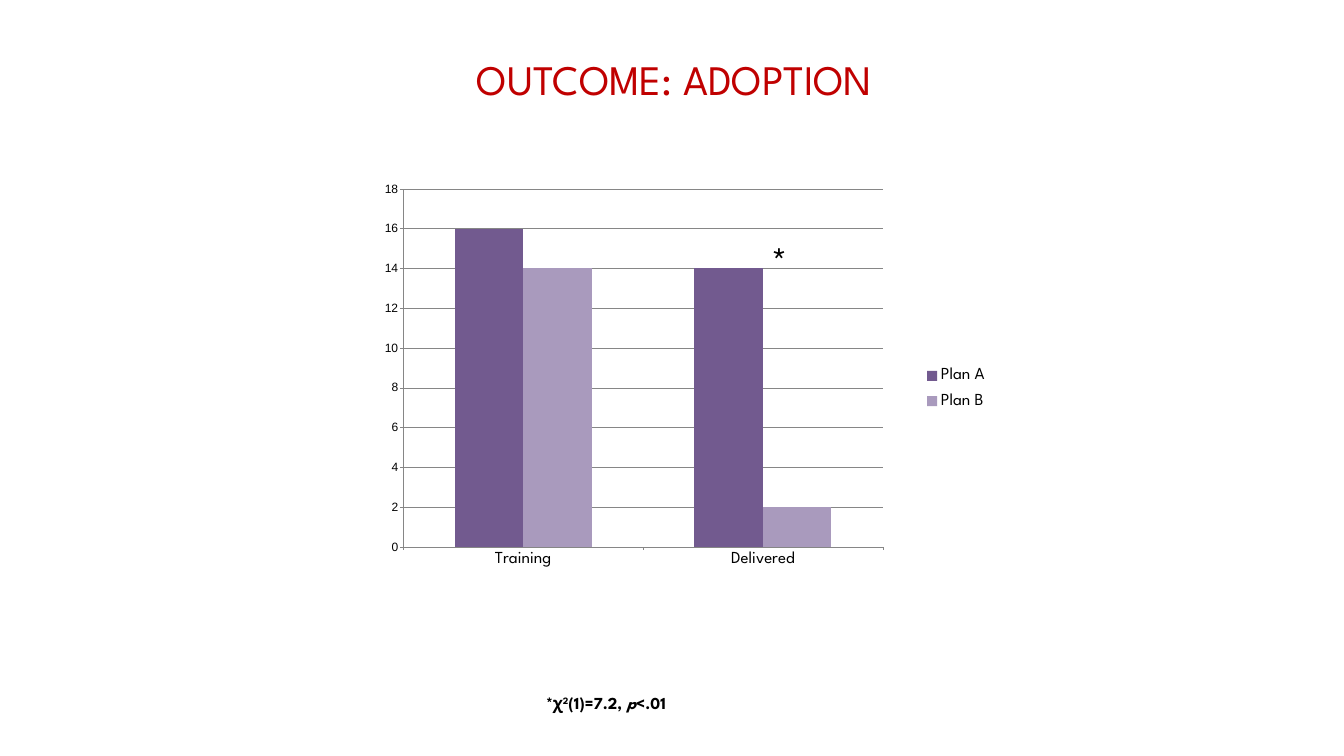
import pptx
import pptx.chart.data
import pptx.dml.color
import pptx.enum.chart
import pptx.enum.text
import pptx.oxml
import pptx.oxml.ns
import pptx.util
from pptx.util import Inches

COLORS = {"title": "C00000", "text": "000000", "axis": "868686",
          "Plan A": "725A8F", "Plan B": "A99ABD"}
FONT = "League Spartan"


def rgb(name):
    return pptx.dml.color.RGBColor.from_string(COLORS[name])


def manual_layout(area, box, target=""):
    """Layout element for an area (inches) inside the chart box."""
    parts = target + "".join(f'<c:{k}Mode val="edge"/>' for k in "xy")
    for k, length, whole in zip("xywh", area, box[2:] * 2):
        parts += f'<c:{k} val="{length / whole:.4f}"/>'
    return pptx.oxml.parse_xml(
        f'<c:layout {pptx.oxml.ns.nsdecls("c")}>'
        f"<c:manualLayout>{parts}</c:manualLayout></c:layout>")


class SlideBuilder:
    def __init__(self, slide):
        self.s = slide

    def style(self, font, size, color="text", name=FONT):
        font.name = name
        font.size = pptx.util.Pt(size)
        font.color.rgb = rgb(color)

    def text(self, box, runs, size, color="text", wrap=False, bold=False):
        """Add a centred line; each run is (text, kind)."""
        tf = self.s.shapes.add_textbox(*map(Inches, box)).text_frame
        tf.word_wrap = wrap
        if not wrap:
            tf.auto_size = pptx.enum.text.MSO_AUTO_SIZE.SHAPE_TO_FIT_TEXT
        p = tf.paragraphs[0]
        p.alignment = pptx.enum.text.PP_ALIGN.CENTER
        for content, kind in runs:
            r = p.add_run()
            r.text = content
            self.style(r.font, size, color)
            r.font.bold = bold
            r.font.italic = kind == "italic"
            if kind == "super":
                r._r.get_or_add_rPr().set("baseline", "30000")

    def axis(self, axis, size, name=FONT):
        self.style(axis.tick_labels.font, size, name=name)
        axis.major_tick_mark = pptx.enum.chart.XL_TICK_MARK.OUTSIDE
        axis.format.line.color.rgb = rgb("axis")

    def column_chart(self, box, categories, series, plot_area, legend_area):
        data = pptx.chart.data.CategoryChartData()
        data.categories = categories
        for name, values in series.items():
            data.add_series(name, values)
        kind = pptx.enum.chart.XL_CHART_TYPE.COLUMN_CLUSTERED
        chart = self.s.shapes.add_chart(kind, *map(Inches, box), data).chart
        chart.has_title = False
        self.style(chart.font, 17.2, name="Arial")

        # Columns
        plot = chart.plots[0]
        plot.gap_width = 150
        plot.overlap = 0
        plot.vary_by_categories = False
        for ser in plot.series:
            ser.format.fill.solid()
            ser.format.fill.fore_color.rgb = rgb(ser.name)

        # Axes
        self.axis(chart.category_axis, 24)
        val = chart.value_axis
        self.axis(val, 17.2, "Arial")
        val.minimum_scale, val.maximum_scale, val.major_unit = 0, 18, 2
        val.has_major_gridlines = True
        val.major_gridlines.format.line.color.rgb = rgb("axis")

        # Legend
        chart.has_legend = True
        legend = chart.legend
        legend.position = pptx.enum.chart.XL_LEGEND_POSITION.RIGHT
        legend.include_in_layout = False
        self.style(legend.font, 24)

        # Fixed places for the plot area and the legend
        tag = pptx.oxml.ns.qn("c:layout")
        area, leg = chart._chartSpace.chart.plotArea, legend._element
        for parent in (area, leg):
            for old in parent.findall(tag):
                parent.remove(old)
        area.insert(0, manual_layout(plot_area, box,
                                     '<c:layoutTarget val="inner"/>'))
        leg.find(pptx.oxml.ns.qn("c:legendPos")).addnext(
            manual_layout(legend_area, box))


def main():
    prs = pptx.Presentation()
    prs.slide_width, prs.slide_height = Inches(26.67), Inches(15)
    b = SlideBuilder(prs.slides.add_slide(prs.slide_layouts[6]))

    # Adoption chart
    b.column_chart((6.67, 3.31, 13.33, 8.89), ["Training", "Delivered"],
                   {"Plan A": (16, 14), "Plan B": (14, 2)},
                   (1.33, 0.44, 9.52, 7.1), (11.5, 3.8, 1.6, 1.2))

    # Test statistic and significance mark
    b.text((10.59, 13.69, 2.87, 0.5),
           [("*χ", ""), ("2", "super"), ("(1)=7.2, ", ""),
            ("p", "italic"), ("<.01", "")], 24, bold=True)
    b.text((15.2, 4.63, 0.55, 1.04), [("*", "")], 56)

    # Title
    b.text((2.55, 1.02, 21.67, 1.83), [("OUTCOME: ADOPTION", "")], 60,
           "title", wrap=True)

    prs.save("out.pptx")


if __name__ == "__main__":
    main()
